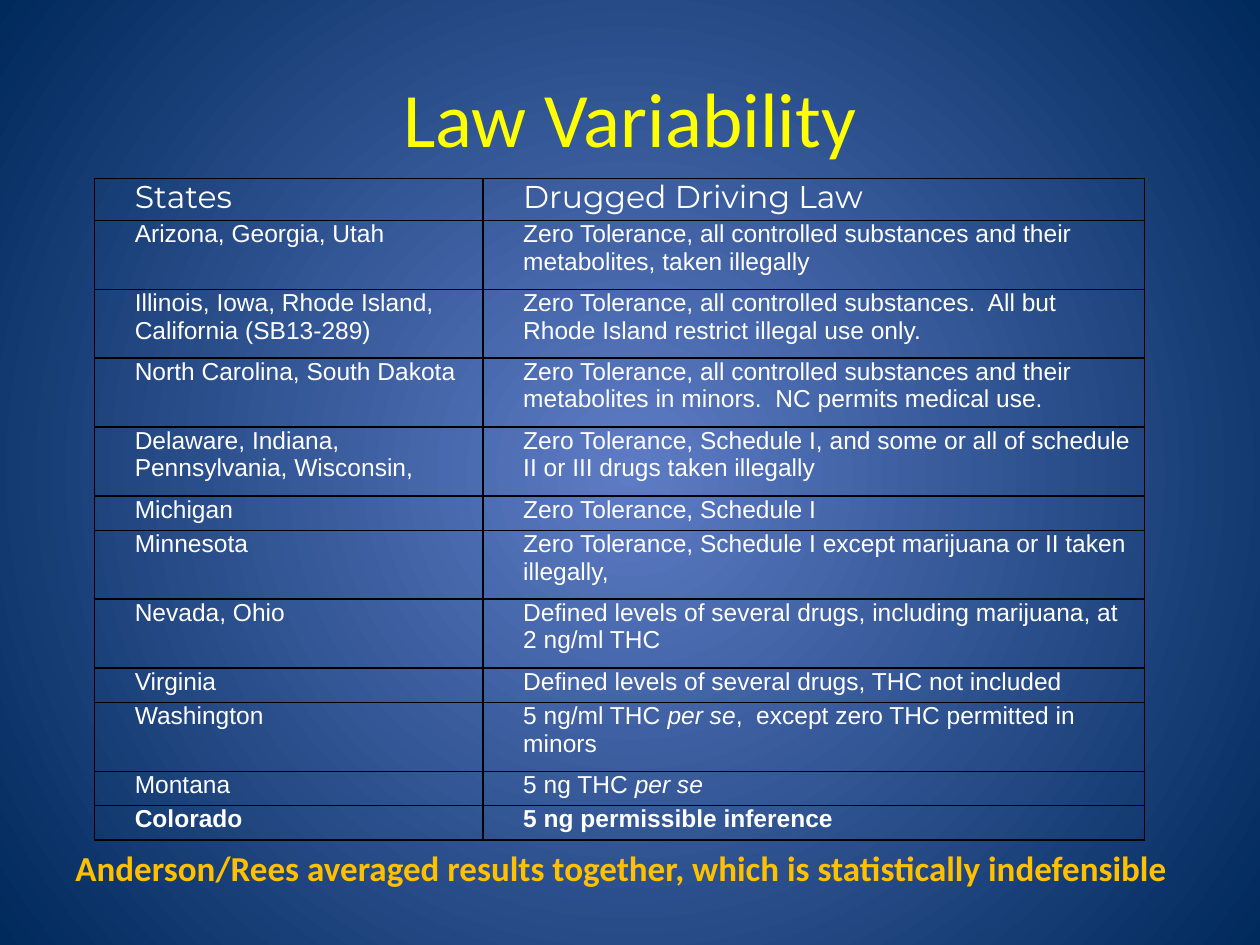
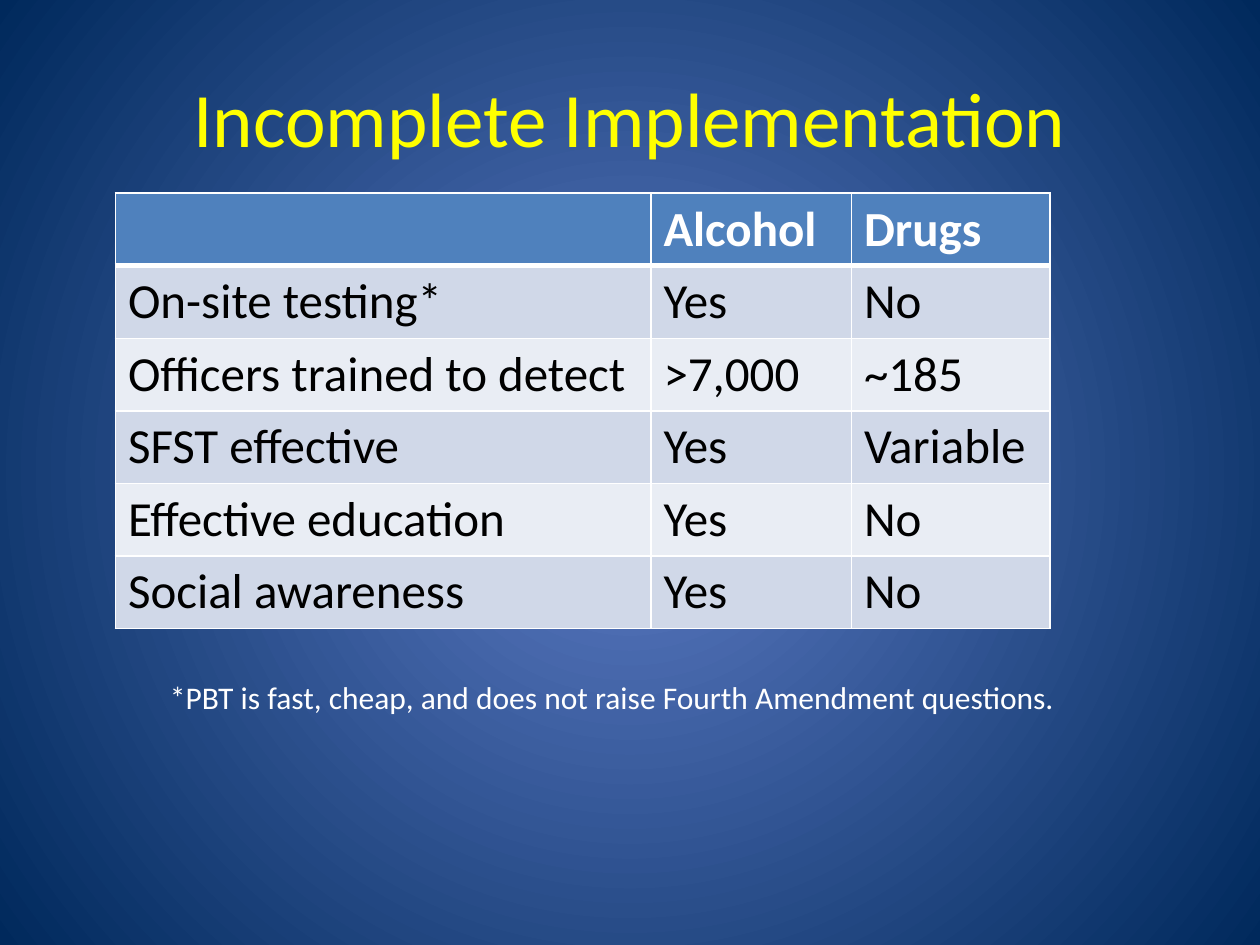
"""Build two slides on drugged driving law and its implementation."""
from dataclasses import dataclass
from typing import NamedTuple

from lxml import etree
from pptx import Presentation
from pptx.dml.color import RGBColor
from pptx.enum.text import MSO_ANCHOR, MSO_AUTO_SIZE, PP_ALIGN
from pptx.oxml.ns import qn
from pptx.util import Emu, Inches, Pt

CENTER = PP_ALIGN.CENTER
MIDDLE = MSO_ANCHOR.MIDDLE
NO_AUTOFIT = MSO_AUTO_SIZE.NONE
TITLE_ONLY = 5
WIDTH, HEIGHT = Inches(10), Inches(7.5)
GRID_COLUMNS = 120
COLORS = {
    "glow": "5E7CC5", "navy": "00295C", "title": "FFFF00", "warning": "FFC000",
    "white": "FFFFFF", "black": "000000", "header": "4F81BD",
    "odd": "D0D8E8", "even": "E9EDF4",
}


class Area(NamedTuple):
    """Left, top, width and height in grid units."""
    left: float
    top: float
    width: float
    height: float


@dataclass(frozen=True)
class TextStyle:
    """Font settings of a text."""
    size: int
    color: str
    font: str = "Calibri"
    bold: bool = False


@dataclass(frozen=True)
class TableLook:
    """Text styles, fills, borders and insets of a table."""
    header: TextStyle
    body: TextStyle
    border: str
    header_fill: str = ""
    band_fills: tuple[str, ...] = ()
    header_rule: float = 1
    last_row_bold: bool = False
    insets: tuple[float, float] = (0.1, 0.05)
    indent: float = 0


@dataclass(frozen=True)
class TableSlide:
    """Content of a slide with a title, a table and a note."""
    title: str
    origin: tuple[float, float]
    column_widths: list[float]
    row_heights: list[float]
    rows: list[tuple[str, ...]]
    look: TableLook
    note: str
    note_area: Area
    note_style: TextStyle


TITLE_AREA = Area(6, 3.6, 108, 15)
TITLE_STYLE = TextStyle(44, "title")
ONE_LINE, TWO_LINES = 3.28, 6.56

LAWS = TableSlide(
    title="Law Variability",
    origin=(9, 17),
    column_widths=[37, 63],
    row_heights=[4] + [TWO_LINES] * 4 + [ONE_LINE] + [TWO_LINES] * 2
    + [ONE_LINE, TWO_LINES] + [ONE_LINE] * 2,
    rows=[
        ("States", "Drugged Driving Law"),
        ("Arizona, Georgia, Utah",
         "Zero Tolerance, all controlled substances and their metabolites, taken illegally"),
        ("Illinois, Iowa, Rhode Island, California (SB13-289)",
         "Zero Tolerance, all controlled substances.  All but Rhode Island restrict illegal use only."),
        ("North Carolina, South Dakota",
         "Zero Tolerance, all controlled substances and their metabolites in minors.  "
         "NC permits medical use."),
        ("Delaware, Indiana, Pennsylvania, Wisconsin,",
         "Zero Tolerance, Schedule I, and some or all of schedule II or III drugs taken illegally"),
        ("Michigan", "Zero Tolerance, Schedule I"),
        ("Minnesota", "Zero Tolerance, Schedule I except marijuana or II taken illegally,"),
        ("Nevada, Ohio", "Defined levels of several drugs, including marijuana, at 2 ng/ml THC"),
        ("Virginia", "Defined levels of several drugs, THC not included"),
        ("Washington", "5 ng/ml THC _per se_,  except zero THC permitted in minors"),
        ("Montana", "5 ng THC _per se_"),
        ("Colorado", "5 ng permissible inference"),
    ],
    look=TableLook(
        header=TextStyle(18, "white", "Montserrat"),
        body=TextStyle(14, "white", "Arial"),
        border="black", last_row_bold=True, insets=(0.07, 0), indent=0.25,
    ),
    note="Anderson/Rees averaged results together, which is statistically indefensible",
    note_area=Area(6, 80, 111, 5.3),
    note_style=TextStyle(20, "warning", bold=True),
)

IMPLEMENTATION = TableSlide(
    title="Incomplete Implementation",
    origin=(11, 18.4),
    column_widths=[51, 19.1, 18.9],
    row_heights=[6.9] * 6,
    rows=[
        ("", "Alcohol", "Drugs"),
        ("On-site testing*", "Yes", "No"),
        ("Officers trained to detect", ">7,000", "~185"),
        ("SFST effective", "Yes", "Variable"),
        ("Effective education", "Yes", "No"),
        ("Social awareness", "Yes", "No"),
    ],
    look=TableLook(
        header=TextStyle(28, "white", bold=True),
        body=TextStyle(28, "black"),
        border="white", header_fill="header", band_fills=("odd", "even"), header_rule=3,
    ),
    note="*PBT is fast, cheap, and does not raise Fourth Amendment questions.",
    note_area=Area(15, 64, 87, 4.8),
    note_style=TextStyle(18, "white"),
)


def grid(units: float) -> Emu:
    """Convert grid units to a length."""
    return Emu(round(WIDTH * units / GRID_COLUMNS))


def rgb(color: str) -> RGBColor:
    """Look up a named colour."""
    return RGBColor.from_string(COLORS[color])


def format_runs(paragraph, style: TextStyle, bold: bool = False) -> None:
    """Apply a text style to every run of a paragraph."""
    for run in paragraph.runs:
        run.font.name = style.font
        run.font.size = Pt(style.size)
        run.font.bold = style.bold or bold
        run.font.color.rgb = rgb(style.color)


def paint_background(master) -> None:
    """Give the master a circular gradient."""
    fill = master.background.fill
    fill.gradient()
    for stop, color in zip(fill.gradient_stops, ("glow", "navy")):
        stop.color.rgb = rgb(color)
    gradient = master.element.xpath("./p:cSld/p:bg//a:gradFill")[0]
    for linear in gradient.findall(qn("a:lin")):
        gradient.remove(linear)
    circle = etree.SubElement(gradient, qn("a:path"), {"path": "circle"})
    center = {side: "50000" for side in "ltrb"}
    etree.SubElement(circle, qn("a:fillToRect"), center)


def add_title(slide, title: str) -> None:
    """Fill and place the title placeholder."""
    heading = slide.shapes.title
    heading.left, heading.top, heading.width, heading.height = map(grid, TITLE_AREA)
    frame = heading.text_frame
    frame.text = title
    frame.auto_size = NO_AUTOFIT
    frame.vertical_anchor = MIDDLE
    frame.paragraphs[0].alignment = CENTER
    format_runs(frame.paragraphs[0], TITLE_STYLE)


def add_note(slide, note: str, area: Area, style: TextStyle) -> None:
    """Write the remark below the table."""
    frame = slide.shapes.add_textbox(*map(grid, area)).text_frame
    frame.word_wrap = True
    frame.text = note
    format_runs(frame.paragraphs[0], style)


def set_borders(cell, color: str, widths: dict[str, float]) -> None:
    """Draw the four sides of a cell."""
    properties = cell._tc.get_or_add_tcPr()
    for position, (side, width) in enumerate(widths.items()):
        line = etree.Element(qn(f"a:ln{side}"), {"w": str(Pt(width))})
        solid = etree.SubElement(line, qn("a:solidFill"))
        etree.SubElement(solid, qn("a:srgbClr"), {"val": COLORS[color]})
        properties.insert(position, line)


def write_cell(cell, text: str, look: TableLook, row: int, is_last: bool) -> None:
    """Write and format one cell, with underscores marking italics."""
    cell.margin_left = cell.margin_right = Inches(look.insets[0])
    cell.margin_top = cell.margin_bottom = Inches(look.insets[1])
    paragraph = cell.text_frame.paragraphs[0]
    if look.indent:
        properties = paragraph._p.get_or_add_pPr()
        properties.set("marL", str(Inches(look.indent)))
        properties.set("indent", "0")
    for part, wording in enumerate(text.split("_")):
        if wording:
            run = paragraph.add_run()
            run.text = wording
            run.font.italic = part % 2 == 1
    format_runs(paragraph, look.body if row else look.header, is_last and look.last_row_bold)

    bands = look.band_fills
    fill = bands[(row - 1) % len(bands)] if row and bands else look.header_fill
    if fill:
        cell.fill.solid()
        cell.fill.fore_color.rgb = rgb(fill)
    else:
        cell.fill.background()
    top = look.header_rule if row == 1 else 1
    bottom = 1 if row else look.header_rule
    set_borders(cell, look.border, {"L": 1, "R": 1, "T": top, "B": bottom})


def add_rows(slide, content: TableSlide) -> None:
    """Add the table and fill its cells."""
    area = Area(*content.origin, sum(content.column_widths), sum(content.row_heights))
    table = slide.shapes.add_table(
        len(content.rows), len(content.column_widths), *map(grid, area)).table
    table.first_row = table.horz_banding = False
    for column, width in zip(table.columns, content.column_widths):
        column.width = grid(width)
    for row, height in zip(table.rows, content.row_heights):
        row.height = grid(height)
    for index, texts in enumerate(content.rows):
        is_last = index == len(content.rows) - 1
        for column, text in enumerate(texts):
            write_cell(table.cell(index, column), text, content.look, index, is_last)


def main() -> None:
    """Build and save the presentation."""
    presentation = Presentation()
    presentation.slide_width, presentation.slide_height = WIDTH, HEIGHT
    paint_background(presentation.slide_master)
    for content in (LAWS, IMPLEMENTATION):
        slide = presentation.slides.add_slide(presentation.slide_layouts[TITLE_ONLY])
        add_title(slide, content.title)
        add_rows(slide, content)
        add_note(slide, content.note, content.note_area, content.note_style)
    presentation.save("out.pptx")


if __name__ == "__main__":
    main()
